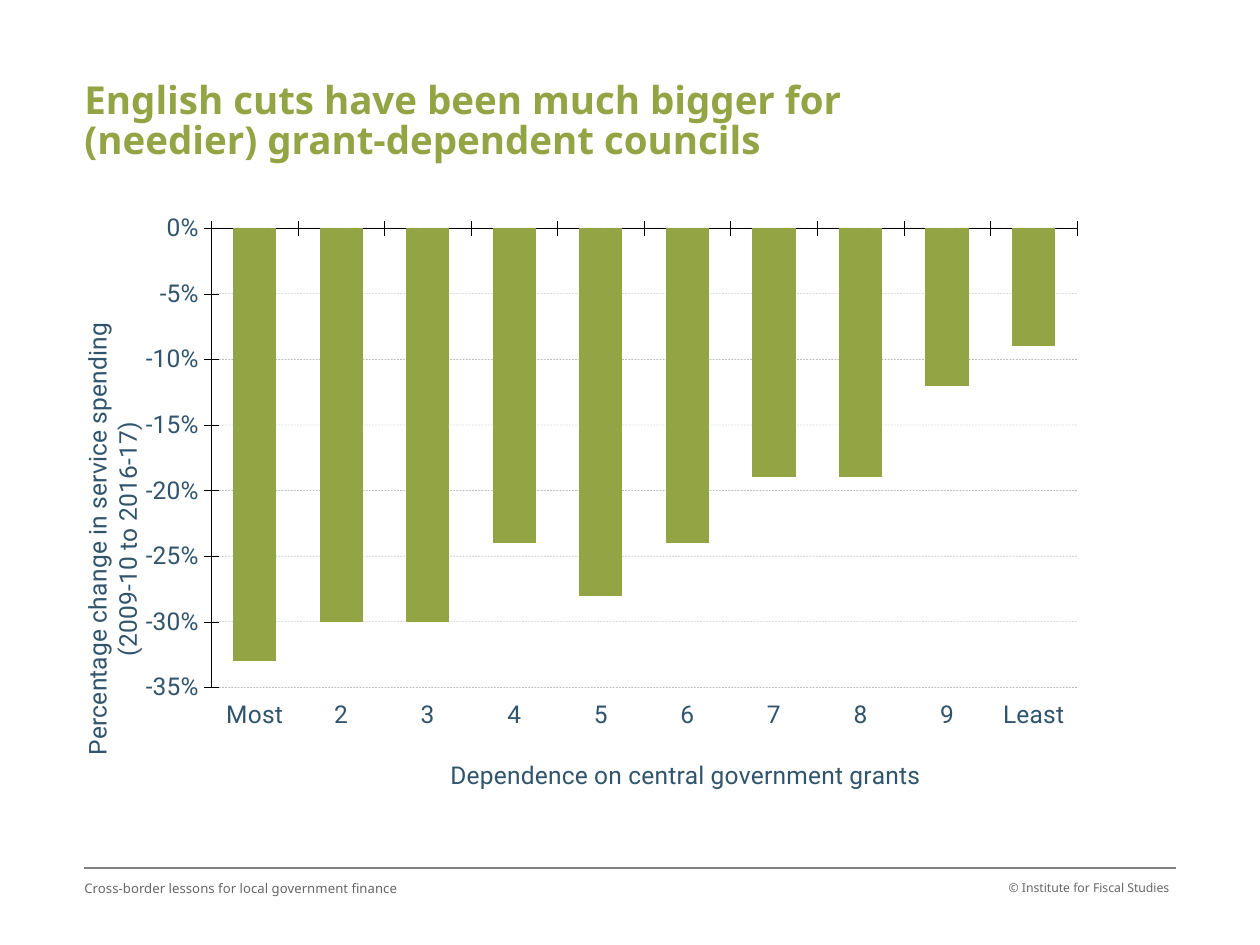
"""Build the slide on spending cuts by dependence on central government grants."""
from dataclasses import dataclass

from lxml import etree
from pptx import Presentation
from pptx.chart import data as chart_data
from pptx.dml.color import RGBColor
from pptx.enum import chart as chart_enum, dml, shapes, text
from pptx.oxml import ns
from pptx.util import Inches, Pt


@dataclass(frozen=True)
class Theme:
    green: str = "93A445"
    blue: str = "31546D"
    footer: str = "666666"
    rule: str = "808080"
    axis: str = "000000"
    grid: str = "333333"
    font: str = "Noto Sans"
    chart_font: str = "Roboto"
    title_size: float = 22
    chart_size: float = 14
    footer_size: float = 7.5
    credit_size: float = 7


@dataclass(frozen=True)
class Box:
    left: float
    top: float
    width: float
    height: float

    def lengths(self) -> tuple:
        return tuple(map(Inches, (self.left, self.top, self.width, self.height)))


@dataclass(frozen=True)
class Bar:
    label: str
    change: float


THEME = Theme()
BARS = [
    Bar("Most", -0.33), Bar("2", -0.30), Bar("3", -0.30), Bar("4", -0.24),
    Bar("5", -0.28), Bar("6", -0.24), Bar("7", -0.19), Bar("8", -0.19),
    Bar("9", -0.12), Bar("Least", -0.09),
]


def style_font(font, size: float, color: str, name: str, bold: bool = False) -> None:
    font.size, font.name, font.bold = Pt(size), name, bold
    font.color.rgb = RGBColor.from_string(color)


def style_line(line, color: str, width: float) -> None:
    line.color.rgb = RGBColor.from_string(color)
    line.width = Pt(width)


def add_text(slide, box: Box, words: str, *, size: float, color: str,
             bold: bool = False, align=text.PP_ALIGN.LEFT,
             spacing: float = 1.0, right_inset: float = 0) -> None:
    frame = slide.shapes.add_textbox(*box.lengths()).text_frame
    frame.word_wrap = True
    frame.margin_left = frame.margin_top = frame.margin_bottom = 0
    frame.margin_right = Inches(right_inset)
    paragraph = frame.paragraphs[0]
    paragraph.text = words
    paragraph.alignment = align
    paragraph.line_spacing = spacing
    style_font(paragraph.font, size, color, THEME.font, bold)


def add_rule(slide, left: float, right: float, top: float) -> None:
    rule = slide.shapes.add_connector(
        shapes.MSO_CONNECTOR.STRAIGHT, Inches(left), Inches(top), Inches(right), Inches(top))
    style_line(rule.line, THEME.rule, 0.75)
    etree.SubElement(rule._element.spPr, ns.qn("a:effectLst"))


def set_layout(element, index: int, **settings) -> None:
    layout = element.find(ns.qn("c:layout"))
    if layout is None:
        layout = etree.Element(ns.qn("c:layout"))
        element.insert(index, layout)
    manual = etree.SubElement(layout, ns.qn("c:manualLayout"))
    for name, value in settings.items():
        etree.SubElement(manual, ns.qn(f"c:{name}")).set("val", str(value))


def style_axis(axis, title_lines: list[str], left: float, top: float) -> None:
    axis.major_tick_mark = chart_enum.XL_TICK_MARK.CROSS
    axis.minor_tick_mark = chart_enum.XL_TICK_MARK.NONE
    style_line(axis.format.line, THEME.axis, 0.25)
    title = axis.axis_title
    frame = title.text_frame
    for index, words in enumerate(title_lines):
        paragraph = frame.add_paragraph() if index else frame.paragraphs[0]
        style_font(paragraph.font, THEME.chart_size, THEME.blue, THEME.chart_font)
        run = paragraph.add_run()
        run.text = words
        style_font(run.font, THEME.chart_size, THEME.blue, THEME.chart_font)
    set_layout(title._element, 1, xMode="edge", yMode="edge", x=left, y=top)


def add_cuts_chart(slide, box: Box, bars: list[Bar]) -> None:
    values = chart_data.CategoryChartData(number_format="0%")
    values.categories = [bar.label for bar in bars]
    values.add_series("Series 1", [bar.change for bar in bars])
    chart = slide.shapes.add_chart(
        chart_enum.XL_CHART_TYPE.COLUMN_CLUSTERED, *box.lengths(), values).chart
    chart.has_title = chart.has_legend = False
    style_font(chart.font, THEME.chart_size, THEME.blue, THEME.chart_font)

    plot = chart.plots[0]
    plot.gap_width = plot.overlap = 100
    plot.vary_by_categories = False
    series = plot.series[0]
    series.invert_if_negative = False
    series.format.fill.solid()
    series.format.fill.fore_color.rgb = RGBColor.from_string(THEME.green)

    style_axis(chart.category_axis, ["Dependence on central government grants"], 0.37, 0.91)
    chart.category_axis.tick_label_position = chart_enum.XL_TICK_LABEL_POSITION.LOW

    value_axis = chart.value_axis
    style_axis(value_axis, ["Percentage change in service spending", "(2009-10 to 2016-17)"],
               0.03, 0.19)
    value_axis.minimum_scale, value_axis.maximum_scale = -0.35, 0
    value_axis.major_unit = 0.05
    value_axis.tick_labels.number_format = "0%"
    value_axis.tick_labels.number_format_is_linked = False
    value_axis.has_major_gridlines = True
    grid = value_axis.major_gridlines.format.line
    style_line(grid, THEME.grid, 0.25)
    grid.dash_style = dml.MSO_LINE.DASH
    color = next(value_axis.major_gridlines._xAx.majorGridlines.iter(ns.qn("a:srgbClr")))
    etree.SubElement(color, ns.qn("a:alpha")).set("val", "50000")

    plot_area = chart._chartSpace.chart.plotArea
    set_layout(plot_area, 0, layoutTarget="inner", xMode="edge", yMode="edge",
               x=0.154, y=0.04, w=0.797, h=0.761)


def main() -> None:
    presentation = Presentation()
    presentation.slide_width, presentation.slide_height = Inches(10), Inches(7.5)
    slide = presentation.slides.add_slide(presentation.slide_layouts[6])
    add_rule(slide, 0.67, 9.33, 6.89)
    add_text(slide, Box(0.67, 0.65, 7.32, 0.44),
             "English cuts have been much bigger for (needier) grant-dependent councils",
             size=THEME.title_size, color=THEME.green, bold=True, spacing=0.88)
    add_text(slide, Box(7.6, 6.99, 1.73, 0.4), "© Institute for Fiscal Studies",
             size=THEME.credit_size, color=THEME.footer,
             align=text.PP_ALIGN.RIGHT, right_inset=0.05)
    add_text(slide, Box(0.67, 6.99, 3.17, 0.4),
             "Cross-border lessons for local government finance",
             size=THEME.footer_size, color=THEME.footer)
    add_cuts_chart(slide, Box(0.35, 1.62, 8.62, 4.79), BARS)
    presentation.save("out.pptx")


if __name__ == "__main__":
    main()
